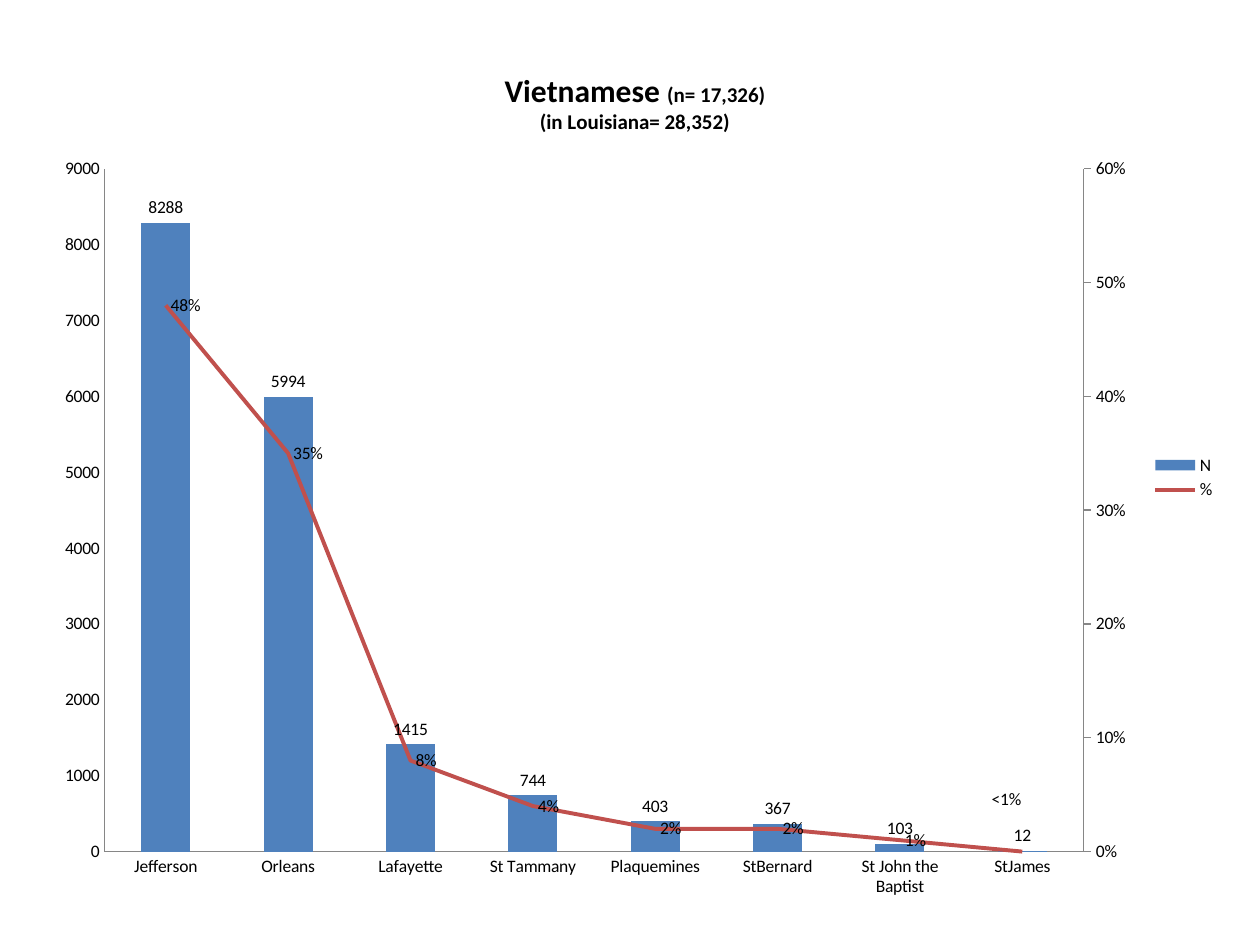
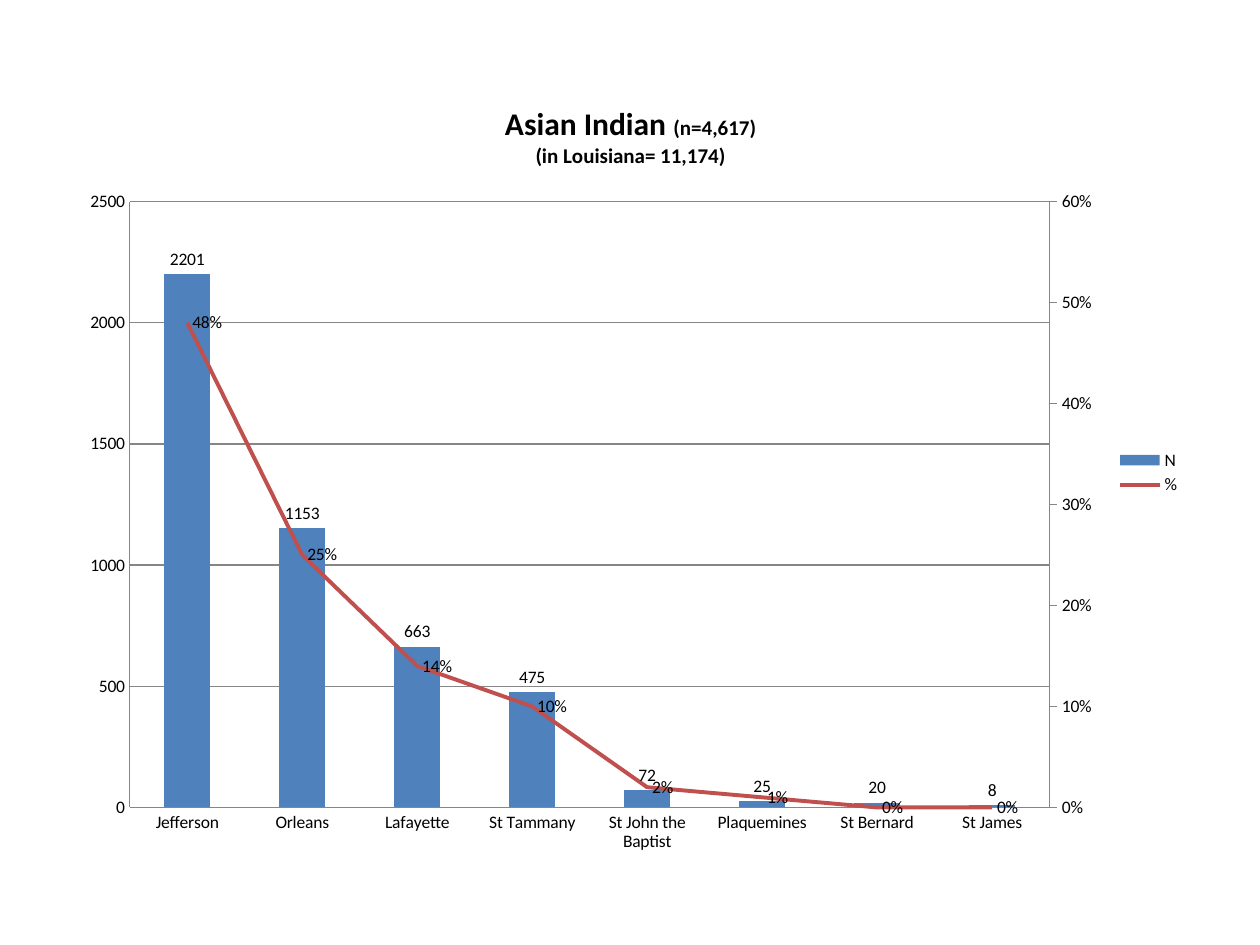
from pptx import Presentation
from pptx import util as u
from pptx.chart import data as chart_data
from pptx.dml.color import RGBColor
from pptx.enum import chart as kinds
from pptx.oxml import parse_xml

PX = 9144
BLACK = RGBColor(0x00, 0x00, 0x00)
GRAY = RGBColor(0x86, 0x86, 0x86)
BLUE = RGBColor(0x4F, 0x81, 0xBD)
RED = RGBColor(0xC0, 0x50, 0x4D)
NS = 'xmlns:c="http://schemas.openxmlformats.org/drawingml/2006/chart"'
BODY = {"name": "Calibri", "size": u.Pt(10)}
TITLE = {"name": "Calibri", "size": u.Pt(18), "bold": True}
SUBTITLE = {**TITLE, "size": u.Pt(12)}

LINE_PLOT = f"""<c:lineChart {NS}><c:grouping val="standard"/><c:varyColors val="0"/>
<c:marker val="1"/><c:axId val="5001"/><c:axId val="5002"/></c:lineChart>"""
RIGHT_AXIS = f"""<c:valAx {NS}><c:axId val="5002"/>
<c:scaling><c:orientation val="minMax"/><c:max val="0.6"/><c:min val="0"/></c:scaling>
<c:delete val="0"/><c:axPos val="r"/><c:numFmt formatCode="0%" sourceLinked="0"/>
<c:majorTickMark val="out"/><c:minorTickMark val="none"/><c:tickLblPos val="nextTo"/>
<c:spPr><a:ln xmlns:a="http://schemas.openxmlformats.org/drawingml/2006/main" w="9525">
<a:solidFill><a:srgbClr val="{GRAY}"/></a:solidFill></a:ln></c:spPr>
<c:crossAx val="5001"/><c:crosses val="max"/><c:crossBetween val="between"/>
<c:majorUnit val="0.1"/></c:valAx>"""
HIDDEN_AXIS = f"""<c:catAx {NS}><c:axId val="5001"/>
<c:scaling><c:orientation val="minMax"/></c:scaling><c:delete val="1"/><c:axPos val="b"/>
<c:majorTickMark val="none"/><c:minorTickMark val="none"/><c:tickLblPos val="nextTo"/>
<c:crossAx val="5002"/><c:crosses val="autoZero"/></c:catAx>"""


def set_all(target, values):
    for name, value in values.items():
        setattr(target, name, value)


def layout(**values):
    items = "".join(f'<c:{name} val="{value}"/>' for name, value in values.items())
    return parse_xml(f"<c:layout {NS}><c:manualLayout>{items}</c:manualLayout></c:layout>")


class ParishDeck:
    """Deck of parish charts with counts as columns and shares as a line."""

    def __init__(self):
        self.deck = Presentation()
        set_all(self.deck, {"slide_width": 1000 * PX, "slide_height": 750 * PX})
        self.page = None

    def add_page(self):
        self.page = self.deck.slides.add_slide(self.deck.slide_layouts[6])

    def add_chart(self, frame, plot_box, parishes, counts, shares, top, step, grid):
        source = chart_data.CategoryChartData()
        source.categories = parishes
        source.add_series("N", counts, "General")
        source.add_series("%", shares, "0%")
        chart = self.page.shapes.add_chart(
            kinds.XL_CHART_TYPE.COLUMN_CLUSTERED, *(side * PX for side in frame), source).chart
        set_all(chart.font, BODY)
        chart.font.color.rgb = BLACK
        chart.has_legend = True
        set_all(chart.legend, {"position": kinds.XL_LEGEND_POSITION.RIGHT,
                               "include_in_layout": False})
        self.style_left_axes(chart, top, step, grid)
        self.add_right_line(chart)
        self.place_plot(chart, frame, plot_box)
        self.style_series(chart)
        return chart

    def style_left_axes(self, chart, top, step, grid):
        set_all(chart.value_axis, {"minimum_scale": 0, "maximum_scale": top,
                                   "major_unit": step, "has_major_gridlines": grid})
        for axis in (chart.category_axis, chart.value_axis):
            axis.major_tick_mark = kinds.XL_TICK_MARK.NONE
            axis.format.line.color.rgb = GRAY
        if grid:
            chart.value_axis.major_gridlines.format.line.color.rgb = GRAY

    def add_right_line(self, chart):
        bars = chart._chartSpace.xpath("//c:barChart")[0]
        share = bars.xpath("c:ser")[1]
        for flag in share.xpath("c:invertIfNegative"):
            share.remove(flag)
        line = parse_xml(LINE_PLOT)
        line.insert(2, share)
        bars.addnext(line)
        left_axis = chart._chartSpace.xpath("//c:valAx")[0]
        left_axis.addnext(parse_xml(HIDDEN_AXIS))
        left_axis.addnext(parse_xml(RIGHT_AXIS))

    def place_plot(self, chart, frame, plot_box):
        area = chart._chartSpace.xpath("//c:plotArea")[0]
        for old in area.xpath("c:layout"):
            area.remove(old)
        left, top, width, height = frame
        x, y, w, h = plot_box
        area.insert(0, layout(layoutTarget="inner", xMode="edge", yMode="edge",
                              x=(x - left) / width, y=(y - top) / height,
                              w=w / width, h=h / height))

    def style_series(self, chart):
        columns, line = chart.plots
        set_all(columns, {"gap_width": 150, "vary_by_categories": False})
        count, share = columns.series[0], line.series[0]
        count.format.fill.solid()
        count.format.fill.fore_color.rgb = BLUE
        share.format.line.color.rgb = RED
        share.format.line.width = u.Pt(2.25)
        share.marker.style = kinds.XL_MARKER_STYLE.NONE
        share.smooth = False
        places = kinds.XL_LABEL_POSITION
        for series, place, pattern in ((count, places.OUTSIDE_END, "General"),
                                       (share, places.RIGHT, "0%")):
            set_all(series.data_labels, {"show_value": True, "position": place,
                                         "number_format": pattern,
                                         "number_format_is_linked": False})
        for leader in chart._chartSpace.xpath("//c:showLeaderLines"):
            leader.set("val", "0")

    def add_title(self, chart, group, total, state_total):
        box = chart.chart_title.text_frame
        first, second = box.paragraphs[0], box.add_paragraph()
        for para, text, style in ((first, group + " ", TITLE), (first, total, SUBTITLE),
                                  (second, state_total, SUBTITLE)):
            span = para.add_run()
            span.text = text
            set_all(span.font, style)
            span.font.color.rgb = BLACK

    def add_point_label(self, chart, index, text, shift):
        label = chart.plots[1].series[0].points[index].data_label
        label.text_frame.text = text
        span = label.text_frame.paragraphs[0].runs[0]
        set_all(span.font, BODY)
        label.position = kinds.XL_LABEL_POSITION.RIGHT
        mark = chart._chartSpace.xpath("//c:dLbl/c:idx")[0]
        mark.addnext(layout(x=shift[0], y=shift[1]))


def main():
    book = ParishDeck()

    book.add_page()
    vietnamese = book.add_chart(
        (33, 33, 942, 692), (83, 134, 777, 542),
        ["Jefferson", "Orleans", "Lafayette", "St Tammany", "Plaquemines", "StBernard",
         "St John the Baptist", "StJames"],
        [8288, 5994, 1415, 744, 403, 367, 103, 12],
        [0.48, 0.35, 0.08, 0.04, 0.02, 0.02, 0.01, 0],
        top=9000, step=1000, grid=False)
    book.add_title(vietnamese, "Vietnamese", "(n= 17,326)", "(in Louisiana= 28,352)")
    book.add_point_label(vietnamese, 7, "<1%", (-0.03, -0.06))

    book.add_page()
    indian = book.add_chart(
        (54, 61, 893, 628), (103, 160, 730, 481),
        ["Jefferson", "Orleans", "Lafayette", "St Tammany", "St John the Baptist",
         "Plaquemines", "St Bernard", "St James"],
        [2201, 1153, 663, 475, 72, 25, 20, 8],
        [0.48, 0.25, 0.14, 0.1, 0.02, 0.01, 0, 0],
        top=2500, step=500, grid=True)
    book.add_title(indian, "Asian Indian", "(n=4,617)", "(in Louisiana= 11,174)")

    book.deck.save("out.pptx")


if __name__ == "__main__":
    main()
